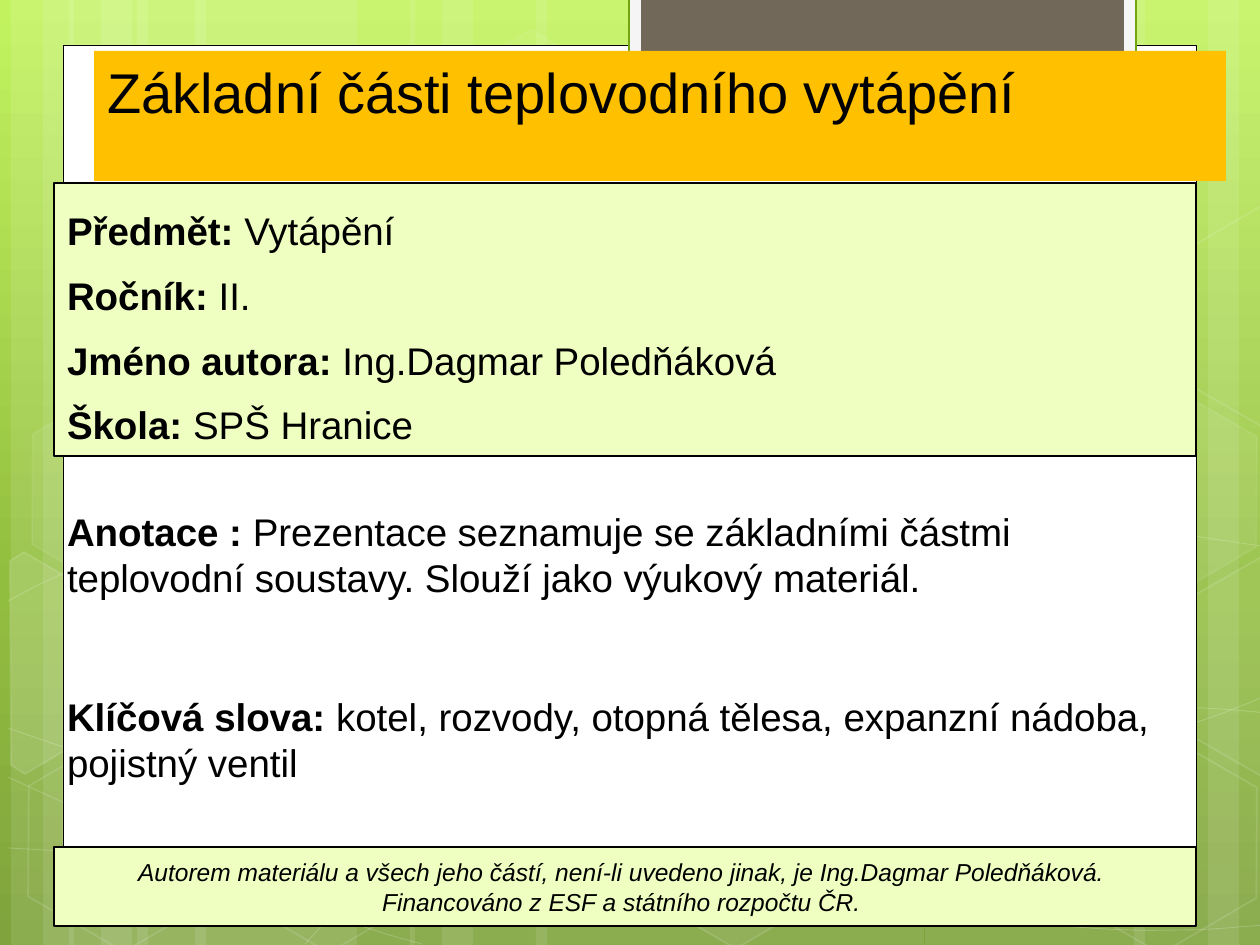
import copy

import pptx
import pptx.dml.color
import pptx.enum.shapes
import pptx.enum.text
import pptx.oxml
import pptx.oxml.ns
import pptx.util

RGB = pptx.dml.color.RGBColor
PRESET = pptx.enum.shapes.MSO_SHAPE
ALIGN = pptx.enum.text.PP_ALIGN
ANCHOR = pptx.enum.text.MSO_ANCHOR
qn = pptx.oxml.ns.qn

EMU_PER_PX = 914400 / 126
WIDTH, HEIGHT = 1260, 945

WHITE = RGB(0xFF, 0xFF, 0xFF)
BLACK = RGB(0x00, 0x00, 0x00)
ORANGE = RGB(0xFF, 0xC0, 0x00)
PALE_GREEN = RGB(0xEF, 0xFF, 0xC1)
GREEN = RGB(0x74, 0xA5, 0x10)
PALE_GREY = RGB(0xF5, 0xF5, 0xF5)
BROWN = RGB(0x71, 0x68, 0x5A)
SKY = [(0, RGB(0xC2, 0xF3, 0x5F)), (0.62, RGB(0x92, 0xBE, 0x3F)),
       (1, RGB(0x80, 0xA3, 0x3D))]

# Paragraphs are lists of (text, bold) runs
TITLE = [[("Základní části teplovodního vytápění", False)]]
DETAILS = [
    [("Předmět: ", True), ("Vytápění", False)],
    [("Ročník:", True), (" II.", False)],
    [("Jméno autora: ", True), ("Ing.Dagmar Poledňáková", False)],
    [("Škola:", True), (" SPŠ Hranice", False)],
]
ANNOTATION = [
    [("Anotace : ", True),
     ("Prezentace seznamuje se základními částmi teplovodní soustavy. "
      "Slouží jako výukový materiál.", False)],
    [("Klíčová slova: ", True),
     ("kotel, rozvody, otopná tělesa, expanzní nádoba, pojistný ventil", False)],
]
CREDIT = [
    [("Autorem materiálu a všech jeho částí, není-li uvedeno jinak, "
      "je Ing.Dagmar Poledňáková. ", False)],
    [("Financováno z ESF a státního rozpočtu ČR. ", False)],
]

# Light stripes: (edge, direction, width of the widest stripe)
STRIPE_GROUPS = [(11, 1, 220), (69, 1, 220), (1271, -1, 220), (410, 1, 388)]

# Bezier chains: a start, then two controls and an end for each segment
CURVES = [
    [(8, 848), (77, 852), (145, 856), (239, 854), (334, 853), (451, 851),
     (577, 838), (703, 825), (882, 801), (998, 777), (1113, 753), (1231, 713),
     (1269, 694)],
    [(8, 601), (45, 581), (82, 562), (152, 543), (224, 524), (326, 496),
     (437, 488), (549, 479), (685, 478), (824, 488), (963, 498), (1193, 537),
     (1269, 547)],
    [(8, 777), (160, 847), (311, 916), (422, 944)],
    [(8, 728), (48, 742), (88, 756), (161, 776), (234, 795), (344, 827),
     (450, 848), (554, 869), (687, 892), (791, 905), (896, 919), (1008, 924),
     (1075, 927), (1142, 932), (1158, 930), (1191, 930), (1223, 929),
     (1246, 926), (1269, 925)],
    [(305, 944), (328, 919), (350, 893), (381, 871), (411, 847), (454, 823),
     (489, 805), (524, 788), (546, 780), (591, 767), (638, 755), (722, 737),
     (766, 728), (811, 719), (818, 719), (857, 717), (896, 713), (958, 709),
     (1000, 708), (1044, 707), (1116, 708), (1116, 708), (1144, 708),
     (1173, 708), (1201, 708), (1223, 709), (1245, 711), (1256, 712),
     (1264, 713), (1260, 712), (1268, 713)],
]

# (left, top, fill opacity %, line opacity %)
HEXAGONS = [
    (421, 45, 4, 8), (626, 742, 6, 12), (14, 745, 0, 12), (18, 393, 7, 8),
    (219, 746, 0, 12), (949, 571, 10, 12), (1051, 747, 0, 12), (1051, 396, 7, 8),
]
# Hexagons cut by the slide edge: (fill opacity %, corners)
CUT_HEXAGONS = [
    (10, [(10, 561), (24, 552), (121, 609), (120, 718), (25, 774), (11, 765)]),
    (4, [(1167, 611), (1263, 556), (1271, 562), (1271, 772), (1263, 777),
         (1167, 722)]),
    (0, [(1167, 261), (1263, 205), (1273, 212), (1271, 422), (1263, 427),
         (1167, 372)]),
]


def px(length):
    return pptx.util.Emu(round(length * EMU_PER_PX))


def fade(solid_fill, opacity):
    alpha = pptx.oxml.parse_xml(
        f'<a:alpha {pptx.oxml.ns.nsdecls("a")} val="{opacity * 1000}"/>')
    solid_fill[0].append(alpha)


def paint(shape, fill=None, line=None, weight=1, fill_opacity=100, line_opacity=100):
    shape.shadow.inherit = False
    properties = shape._element.spPr
    if fill is None or not fill_opacity:
        shape.fill.background()
    else:
        shape.fill.solid()
        shape.fill.fore_color.rgb = fill
        if fill_opacity < 100:
            fade(properties.find(qn("a:solidFill")), fill_opacity)
    if line is None:
        shape.line.fill.background()
    else:
        shape.line.color.rgb = line
        shape.line.width = pptx.util.Pt(weight)
        if line_opacity < 100:
            fade(properties.find(qn("a:ln")).find(qn("a:solidFill")), line_opacity)
    return shape


def add_block(shapes, box, preset=PRESET.RECTANGLE, **look):
    return paint(shapes.add_shape(preset, *map(px, box)), **look)


def add_outline(shapes, points, close, **look):
    builder = shapes.build_freeform(*points[0], scale=EMU_PER_PX)
    builder.add_line_segments(points[1:], close=close)
    return paint(builder.convert_to_shape(), **look)


def bend(outline):
    """Turn each three straight segments into one cubic Bezier segment."""
    segments = list(outline._element.iter(qn("a:lnTo")))
    for i in range(0, len(segments), 3):
        curve = pptx.oxml.parse_xml(f'<a:cubicBezTo {pptx.oxml.ns.nsdecls("a")}/>')
        segments[i].addprevious(curve)
        for segment in segments[i:i + 3]:
            curve.append(segment[0])
            segment.getparent().remove(segment)


def write(shape, paragraphs, size, italic=False, frame_format=None, **paragraph_format):
    frame = shape.text_frame
    settings = {"word_wrap": True, "vertical_anchor": ANCHOR.TOP,
                "auto_size": pptx.enum.text.MSO_AUTO_SIZE.NONE,
                "margin_left": px(13), "margin_right": px(13),
                "margin_top": px(6), "margin_bottom": px(6), **(frame_format or {})}
    for key, value in settings.items():
        setattr(frame, key, value)
    for i, runs in enumerate(paragraphs):
        paragraph = frame.add_paragraph() if i else frame.paragraphs[0]
        for key, value in {"alignment": ALIGN.LEFT, **paragraph_format}.items():
            setattr(paragraph, key, value)
        for text, bold in runs:
            run = paragraph.add_run()
            run.text = text
            run.font.color.rgb = BLACK
            for key, value in {"name": "Arial", "size": pptx.util.Pt(size),
                               "bold": bold, "italic": italic}.items():
                setattr(run.font, key, value)


def draw_background(slide):
    fill = slide.background.fill
    fill.gradient()
    fill.gradient_angle = 270
    stops = next(slide._element.iter(qn("a:gsLst")))
    stops.append(copy.deepcopy(stops[-1]))
    for stop, (position, color) in zip(fill.gradient_stops, SKY):
        stop.position = position
        stop.color.rgb = color

    shapes = slide.shapes
    for edge, direction, widest in STRIPE_GROUPS:
        for offset, width in ((126, widest), (0, 63), (32, 105)):
            left = edge + offset if direction > 0 else edge - offset - width
            add_block(shapes, (left, 0, width, HEIGHT), fill=WHITE, fill_opacity=10)
    for chain in CURVES:
        bend(add_outline(shapes, chain, False, line=WHITE, weight=0.5, line_opacity=20))
    for left, top, fill_opacity, line_opacity in HEXAGONS:
        hexagon = add_block(shapes, (left, top, 220, 192), PRESET.HEXAGON, fill=WHITE,
                            line=WHITE, fill_opacity=fill_opacity,
                            line_opacity=line_opacity)
        hexagon.adjustments[0] = 0.285
        hexagon.rotation = 30
    for fill_opacity, corners in CUT_HEXAGONS:
        add_outline(shapes, corners, True, fill=WHITE, line=WHITE,
                    fill_opacity=fill_opacity, line_opacity=12)
    add_block(shapes, (63, 45, 1134, 853), fill=WHITE, line=BLACK, weight=0.5)
    add_block(shapes, (629, -2, 507, 97), fill=PALE_GREY, line=GREEN, weight=1.25)
    add_block(shapes, (641, -2, 483, 85), fill=BROWN)


def main():
    deck = pptx.Presentation()
    deck.slide_width, deck.slide_height = px(WIDTH), px(HEIGHT)
    slide = deck.slides.add_slide(deck.slide_layouts[5])
    shapes = slide.shapes
    draw_background(slide)

    title = shapes.title
    title.left, title.top, title.width, title.height = map(px, (94, 51, 1132, 130))
    shapes._spTree.append(title._element)  # in front of the background
    write(paint(title, fill=ORANGE), TITLE, 32)

    details = add_block(shapes, (54, 183, 1142, 273), fill=PALE_GREEN, line=BLACK,
                        weight=0.75)
    write(details, DETAILS, 22, line_spacing=1.4)
    credit = add_block(shapes, (54, 847, 1142, 79), fill=PALE_GREEN, line=BLACK,
                       weight=1.25)
    write(credit, CREDIT, 14, italic=True, alignment=ALIGN.CENTER,
          frame_format={"vertical_anchor": ANCHOR.MIDDLE})
    annotation = shapes.add_textbox(*map(px, (54, 456, 1150, 386)))
    write(annotation, ANNOTATION, 22, frame_format={"margin_top": px(52)})
    annotation.text_frame.paragraphs[1].space_before = pptx.util.Pt(53)
    deck.save("out.pptx")


if __name__ == "__main__":
    main()
